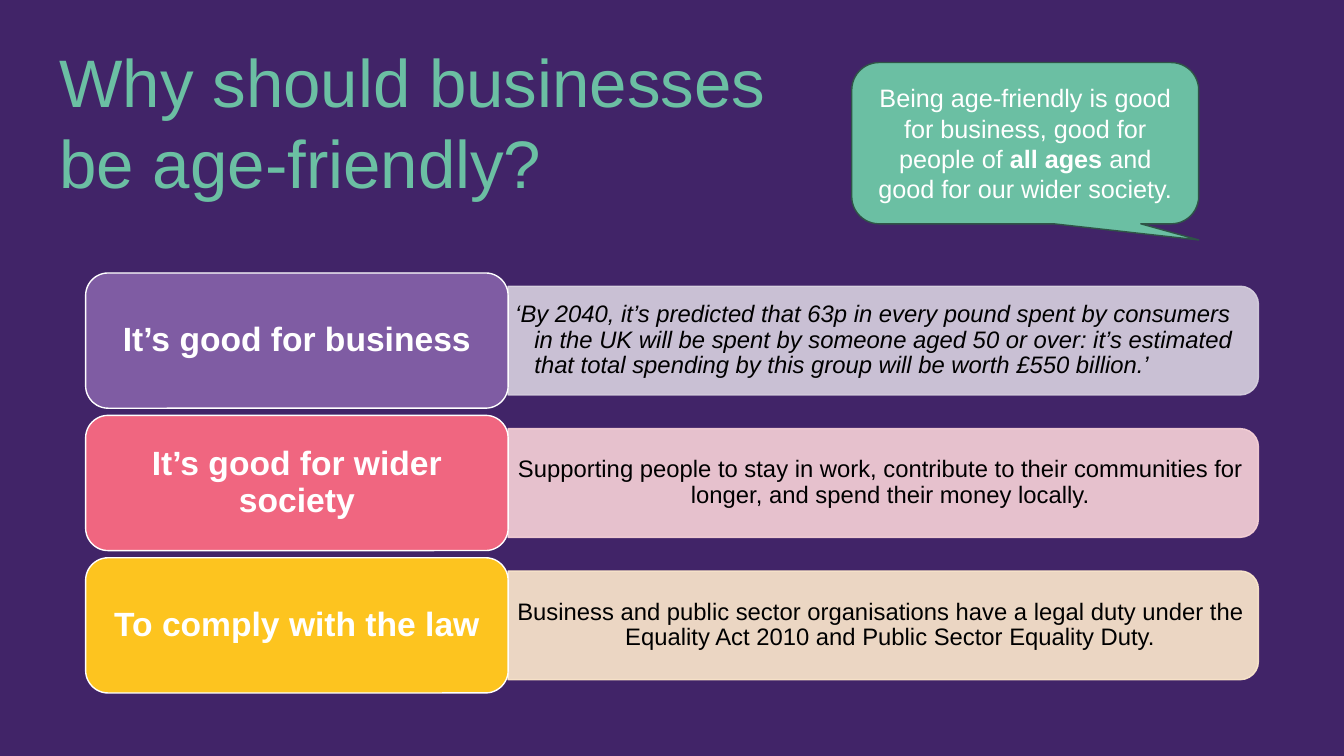
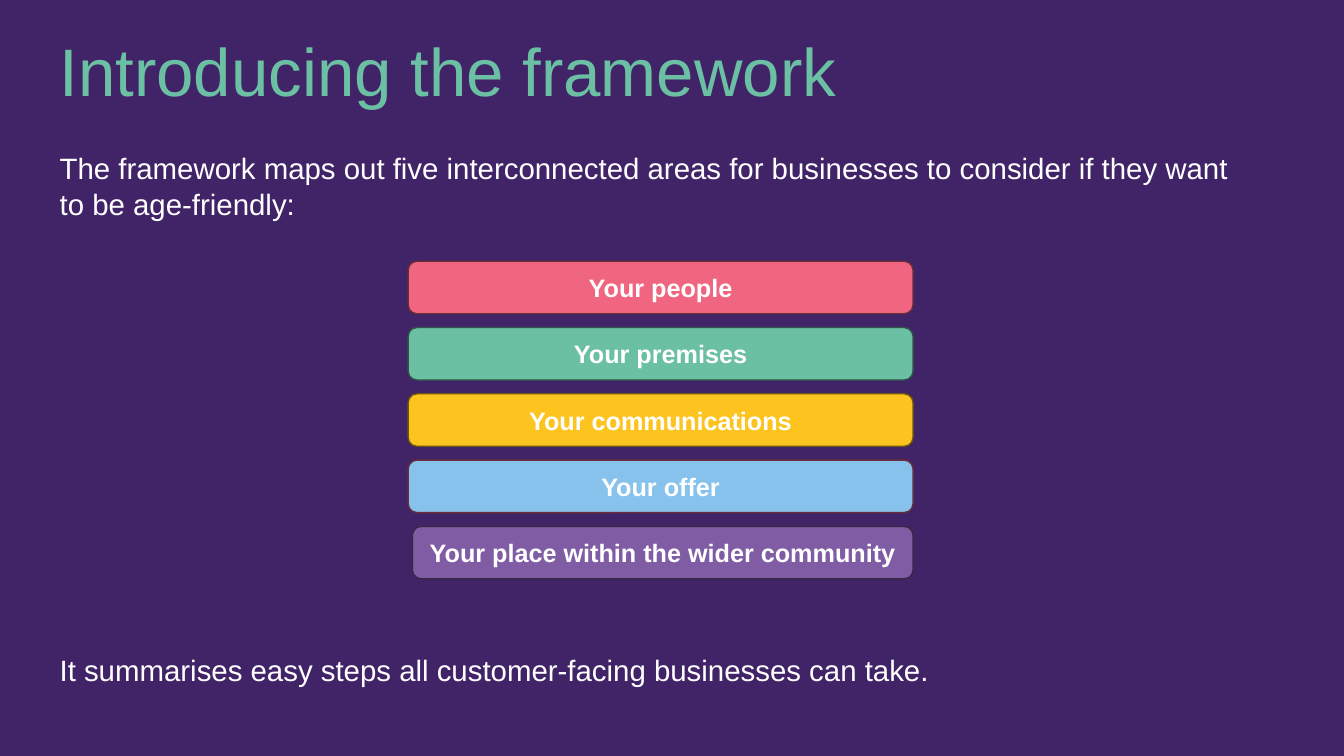
"""Build two slides on why businesses should be age-friendly and the framework for it."""
from pptx import Presentation
from pptx import util as u
from pptx.dml.color import RGBColor
from pptx.enum import shapes, text
from pptx.oxml.ns import qn
from pptx.oxml.xmlchemy import OxmlElement

NIGHT = RGBColor(0x41, 0x24, 0x68)
GREEN = RGBColor(0x6B, 0xBF, 0xA3)
PURPLE = RGBColor(0x7F, 0x5C, 0xA3)
PINK = RGBColor(0xF0, 0x66, 0x80)
YELLOW = RGBColor(0xFD, 0xC4, 0x1F)
BLUE = RGBColor(0x86, 0xC2, 0xEB)
PALE_PURPLE = RGBColor(0xD8, 0xD2, 0xE0)
PALE_PINK = RGBColor(0xF9, 0xD3, 0xD8)
PALE_YELLOW = RGBColor(0xFE, 0xEA, 0xCD)
DARK_GREEN = RGBColor(0x2F, 0x54, 0x47)
DARK_PINK = RGBColor(0x69, 0x2D, 0x38)
DARK_YELLOW = RGBColor(0x6F, 0x56, 0x0E)
DARK_PURPLE = RGBColor(0x38, 0x28, 0x47)
WHITE = RGBColor(0xFF, 0xFF, 0xFF)
BLACK = RGBColor(0, 0, 0)

FONT = "Arial"
COLUMNS, ROWS = 320, 180
LEFT = 14.2
SHAPE, ALIGN, ANCHOR = shapes.MSO_SHAPE, text.PP_ALIGN, text.MSO_ANCHOR


def write(paragraph, words, size=18, color=WHITE, bold=False, italic=False,
          align=ALIGN.CENTER, spacing=1.0, before=0, indent=0):
    """Fill a paragraph; asterisks enclose bold words and a newline breaks the line."""
    paragraph.alignment = align
    paragraph.line_spacing = spacing
    paragraph.space_before, paragraph.space_after = u.Pt(before), u.Pt(0)
    properties = paragraph._p.get_or_add_pPr()
    properties.set("marL", str(u.Inches(indent)))
    properties.set("indent", str(-u.Inches(indent)))
    properties.append(OxmlElement("a:buNone"))
    for row, line in enumerate(words.split("\n")):
        if row:
            paragraph.add_line_break()
        for part, piece in enumerate(line.split("*")):
            run = paragraph.add_run()
            run.text = piece
            run.font.name, run.font.size = FONT, u.Pt(size)
            run.font.bold, run.font.italic = bold or part % 2 == 1, italic
            run.font.color.rgb = color


class Deck:
    """Holds the shared style and the slide being built."""

    def __init__(self):
        self.file = Presentation()
        self.file.slide_width, self.file.slide_height = u.Inches(13.33), u.Inches(7.5)
        background = self.file.slide_master.background.fill
        background.solid()
        background.fore_color.rgb = NIGHT
        self.slide = None

    def area(self, left, top, width, height):
        """Turn grid columns and rows into lengths."""
        column, row = self.file.slide_width / COLUMNS, self.file.slide_height / ROWS
        return [u.Emu(round(n * unit))
                for n, unit in zip((left, top, width, height), (column, row) * 2)]

    def placeholder(self, holder, box, paragraphs, **style):
        """Move a template placeholder and write its paragraphs."""
        holder.left, holder.top, holder.width, holder.height = self.area(*box)
        frame = holder.text_frame
        frame.auto_size, frame.word_wrap = text.MSO_AUTO_SIZE.NONE, True
        frame.vertical_anchor = ANCHOR.TOP
        frame.margin_left = frame.margin_right = frame.margin_top = frame.margin_bottom = 0
        for index, (words, extra) in enumerate(paragraphs):
            paragraph = frame.add_paragraph() if index else frame.paragraphs[0]
            write(paragraph, words, align=ALIGN.LEFT, **style, **extra)

    def start(self, layout, title, top, spacing):
        """Add a slide with its title."""
        self.slide = self.file.slides.add_slide(self.file.slide_layouts[layout])
        self.placeholder(self.slide.shapes.title, (LEFT, top, 291.6, 27.1),
                         [(title, {"spacing": spacing})], size=48, color=GREEN)

    def body(self, box, paragraphs):
        """Fill the body placeholder."""
        self.placeholder(self.slide.placeholders[1], box, paragraphs, size=21)

    def panel(self, kind, box, fill, line, words="", **style):
        """Draw a filled preset shape, with text if given."""
        panel = self.slide.shapes.add_shape(kind, *self.area(*box))
        panel.shadow.inherit = False
        panel.fill.solid()
        panel.fill.fore_color.rgb = fill
        panel.line.color.rgb, panel.line.width = line, u.Pt(1)
        if words:
            panel.text_frame.word_wrap = True
            panel.text_frame.vertical_anchor = ANCHOR.MIDDLE
            write(panel.text_frame.paragraphs[0], words, **style)
        return panel

    def band(self, left, middle, width, height, fill):
        """Draw a translucent band rounded at its right end."""
        box = (left + (width - height) / 2, middle - width / 2, height, width)
        band = self.panel(SHAPE.ROUND_2_SAME_RECTANGLE, box, fill, fill)
        band.rotation = 90
        for color in band._element.spPr.iter(qn("a:srgbClr")):
            alpha = OxmlElement("a:alpha")
            alpha.set("val", "90000")
            color.append(alpha)

    def note(self, box, words, **style):
        """Add a text box centred on its height."""
        frame = self.slide.shapes.add_textbox(*self.area(*box)).text_frame
        frame.word_wrap, frame.vertical_anchor = True, ANCHOR.MIDDLE
        frame.margin_left = frame.margin_right = u.Inches(0.07)
        frame.margin_top = frame.margin_bottom = u.Inches(0.04)
        write(frame.paragraphs[0], words, **style)


def reasons(deck):
    """Build the slide of three reasons."""
    deck.start(5, "Why should businesses\nbe age-friendly?", 9.6, 1.0)
    callout = deck.panel(
        SHAPE.ROUNDED_RECTANGULAR_CALLOUT, (202.8, 14.9, 82.6, 38.4), GREEN, DARK_GREEN,
        "Being age-friendly is good for business, good for people of *all ages* "
        "and good for our wider society.")
    for index, value in enumerate((0.5, 0.6, 0.17)):
        callout.adjustments[index] = value
    rows = [
        ("It’s good for business", PURPLE, PALE_PURPLE,
         "‘By 2040, it’s predicted that 63p in every pound spent by consumers in the UK "
         "will be spent by someone aged 50 or over: it’s estimated that total spending "
         "by this group will be worth £550 billion.’",
         {"italic": True, "align": ALIGN.LEFT}),
        ("It’s good for wider society", PINK, PALE_PINK,
         "Supporting people to stay in work, contribute to their communities for longer, "
         "and spend their money locally.", {}),
        ("To comply with the law", YELLOW, PALE_YELLOW,
         "Business and public sector organisations have a legal duty under the "
         "Equality Act 2010 and Public Sector Equality Duty.", {}),
    ]
    label_height, note_height, step = 32.2, 23.3, 33.9
    for index, (reason, fill, pale, evidence, style) in enumerate(rows):
        top = 65 + index * step
        middle = top + label_height / 2
        deck.band(121, middle, 178.6, 25.9, pale)
        deck.note((121, middle - note_height / 2, 177.4, note_height), evidence,
                  size=17, color=BLACK, spacing=0.9, indent=0.19, **style)
        deck.panel(SHAPE.ROUNDED_RECTANGLE, (20.4, top, 100.6, label_height), fill, WHITE,
                   reason, size=24, bold=True, spacing=0.9)


def framework(deck):
    """Build the slide of five areas."""
    deck.start(1, "Introducing the framework", LEFT, u.Pt(36))
    deck.body((LEFT, 35.8, 280, 116.2), [
        ("The framework maps out five interconnected areas for businesses to consider "
         "if they want to be age-friendly:", {}),
        ("It summarises easy steps all customer-facing businesses can take.",
         {"spacing": u.Pt(27), "before": 306}),
    ])
    areas = [
        ("Your people", PINK, DARK_PINK, 97.2),
        ("Your premises", GREEN, DARK_GREEN, 97.2),
        ("Your communications", YELLOW, DARK_YELLOW, 97.2),
        ("Your offer", BLUE, DARK_PINK, 97.2),
        ("Your place within the wider community", PURPLE, DARK_PURPLE, 98.2),
    ]
    right, step = 217.4, 15.78
    for index, (area, fill, line, left) in enumerate(areas):
        deck.panel(SHAPE.FLOWCHART_ALTERNATE_PROCESS,
                   (left, 62.2 + index * step, right - left, 12.5), fill, line, area, bold=True)


def main():
    """Build and save the deck."""
    deck = Deck()
    reasons(deck)
    framework(deck)
    deck.file.save("out.pptx")


if __name__ == "__main__":
    main()
